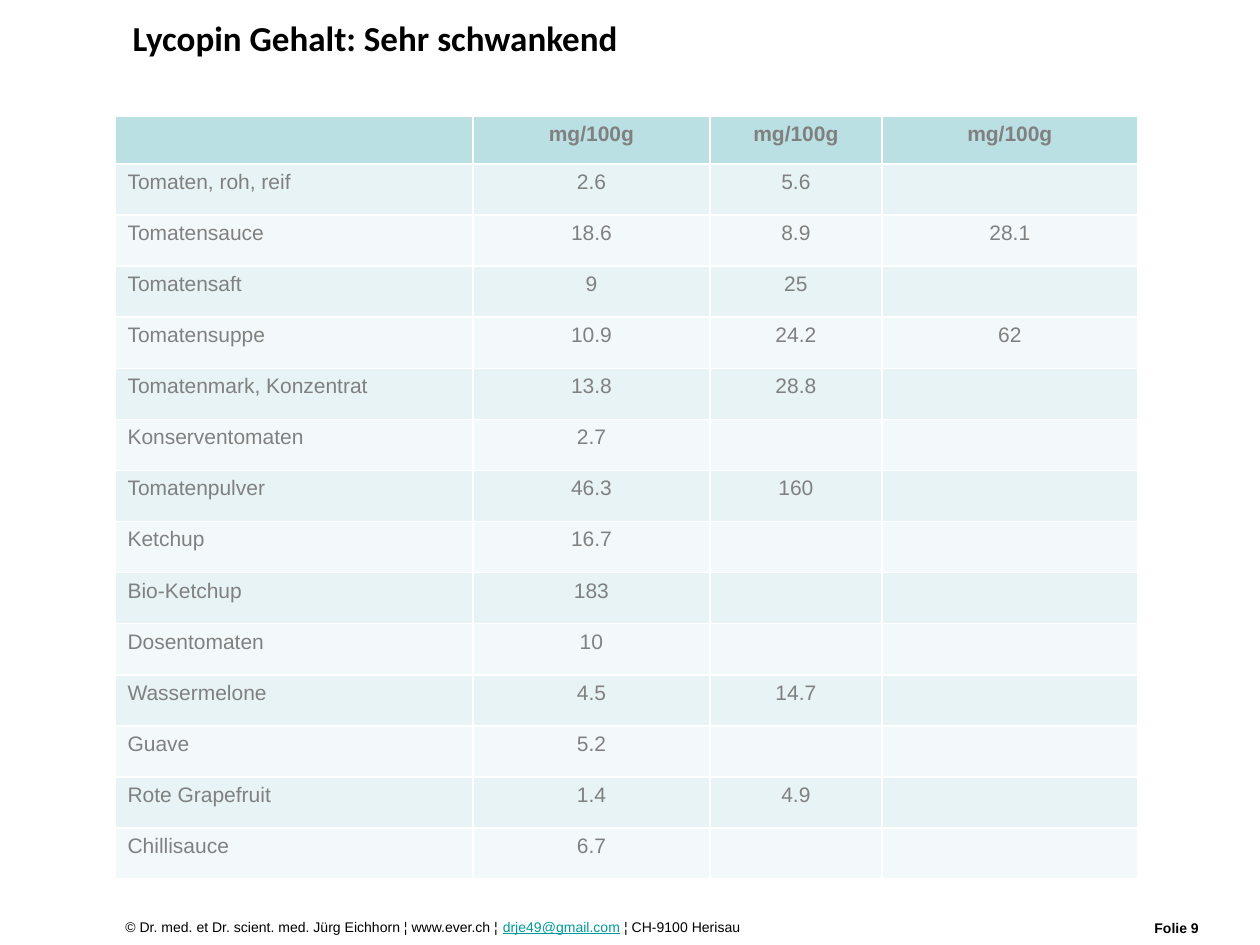
from pptx import Presentation
from pptx.dml.color import RGBColor
from pptx.enum.text import MSO_ANCHOR, PP_ALIGN
from pptx.util import Pt

LEFT, CENTER = PP_ALIGN.LEFT, PP_ALIGN.CENTER
MIDDLE, TOP = MSO_ANCHOR.MIDDLE, MSO_ANCHOR.TOP
PX = 914400 // 126

# Content
TITLE = "Lycopin Gehalt: Sehr schwankend"
HEADER = ("", "mg/100g", "mg/100g", "mg/100g")
FOODS = [
    ("Tomaten, roh, reif", "2.6", "5.6", ""),
    ("Tomatensauce", "18.6", "8.9", "28.1"),
    ("Tomatensaft", "9", "25", ""),
    ("Tomatensuppe", "10.9", "24.2", "62"),
    ("Tomatenmark, Konzentrat", "13.8", "28.8", ""),
    ("Konserventomaten", "2.7", "", ""),
    ("Tomatenpulver", "46.3", "160", ""),
    ("Ketchup", "16.7", "", ""),
    ("Bio-Ketchup", "183", "", ""),
    ("Dosentomaten", "10", "", ""),
    ("Wassermelone", "4.5", "14.7", ""),
    ("Guave", "5.2", "", ""),
    ("Rote Grapefruit", "1.4", "4.9", ""),
    ("Chillisauce", "6.7", "", ""),
]
FOOTER = [
    ("© Dr. med. et Dr. scient. med. Jürg Eichhorn ¦ www.ever.ch ¦ ", {}),
    ("drje49@gmail.com", {"color": "009999", "underline": True}),
    (" ¦ CH-9100 Herisau", {}),
]

# Layout in px
TITLE_BOX = (120, 6, 804, 63)
TABLE_BOX = (115, 116, 1023, 755)
COLUMN_WIDTHS = (358, 237, 172, 256)
HEADER_HEIGHT = 39
FOOTER_BOX = (113, 912, 1022, 29)
NUMBER_BOX = (1142, 913, 118, 29)
HEADER_FILL, BAND_FILLS = "BBE0E3", ("E7F3F4", "F3F9FA")


def px(*values):
    return [round(value * PX) for value in values]


def rgb(color):
    return RGBColor.from_string(color)


def add_text(paragraph, text, size=8, font="Arial", color="000000",
             bold=False, underline=False, align=LEFT):
    paragraph.alignment = align
    run = paragraph.add_run()
    run.text = text
    run.font.size = Pt(size)
    run.font.name = font
    run.font.bold = bold
    run.font.underline = underline
    run.font.color.rgb = rgb(color)


def add_text_box(slide, box, runs):
    frame = slide.shapes.add_textbox(*px(*box)).text_frame
    frame.word_wrap = True
    for text, style in runs:
        add_text(frame.paragraphs[0], text, **style)


def add_food_table(slide):
    rows = [HEADER] + FOODS
    table = slide.shapes.add_table(len(rows), len(HEADER), *px(*TABLE_BOX)).table
    for column, width in zip(table.columns, px(*COLUMN_WIDTHS)):
        column.width = width
    body_height = (TABLE_BOX[3] - HEADER_HEIGHT) / len(FOODS)
    for row_index, values in enumerate(rows):
        is_header = row_index == 0
        height = HEADER_HEIGHT if is_header else body_height
        fill = HEADER_FILL if is_header else BAND_FILLS[(row_index - 1) % 2]
        table.rows[row_index].height = px(height)[0]
        for column_index, value in enumerate(values):
            cell = table.cell(row_index, column_index)
            cell.vertical_anchor = TOP
            cell.fill.solid()
            cell.fill.fore_color.rgb = rgb(fill)
            add_text(cell.text_frame.paragraphs[0], value, size=12,
                     color="808080", bold=is_header,
                     align=CENTER if column_index else LEFT)


def main():
    presentation = Presentation()
    presentation.slide_width, presentation.slide_height = px(1260, 945)
    slide = presentation.slides.add_slide(presentation.slide_layouts[5])

    # Title
    title = slide.shapes.title
    title.left, title.top, title.width, title.height = px(*TITLE_BOX)
    title.text_frame.vertical_anchor = MIDDLE
    add_text(title.text_frame.paragraphs[0], TITLE, size=20, font="Calibri", bold=True)

    # Lycopene values
    add_food_table(slide)

    # Footer and slide number
    add_text_box(slide, FOOTER_BOX, FOOTER)
    add_text_box(slide, NUMBER_BOX, [("Folie 9", {"bold": True})])

    presentation.save("out.pptx")


if __name__ == "__main__":
    main()
